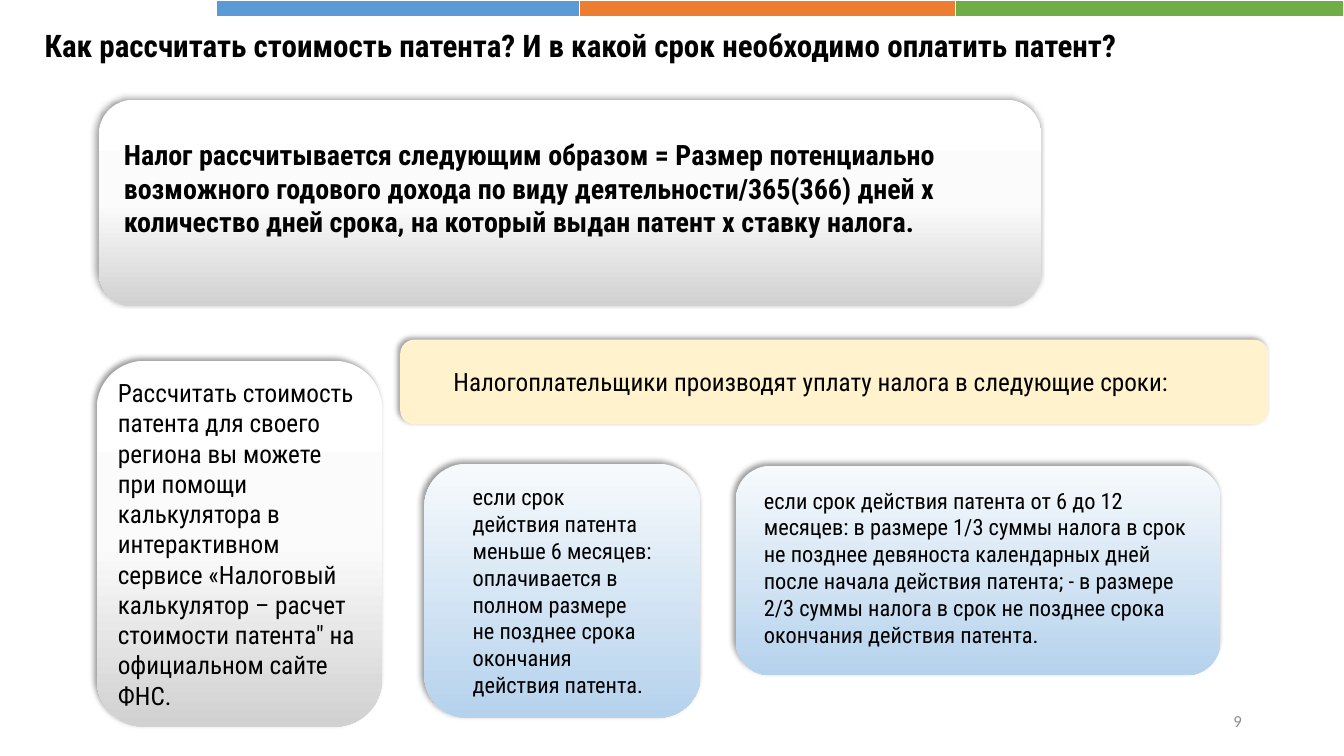
from lxml.etree import SubElement
from pptx import Presentation
from pptx.dml.color import RGBColor
from pptx.enum.shapes import MSO_SHAPE
from pptx.enum.text import MSO_ANCHOR, PP_ALIGN
from pptx.oxml.ns import qn
from pptx.util import Inches, Pt

GREY = [(0, "FFFFFF"), (50, "FBFBFB"), (100, "D1D1D1")]
BLUE = [(0, "F7FAFD"), (100, "B5D2EC")]
CREAM = "FFF2CC"


def color(code):
    return RGBColor.from_string(code)


class Page:
    """Draws styled elements on one slide over a grid of 100 columns and 100 rows."""

    font = "Roboto Condensed"
    ink = "000000"

    def __init__(self, deck):
        self.slide = deck.slides.add_slide(deck.slide_layouts[6])
        self.col = deck.slide_width / 100
        self.row = deck.slide_height / 100

    def place(self, box):
        x, y, w, h = box
        return [round(v) for v in (x * self.col, y * self.row, w * self.col, h * self.row)]

    def bar(self, box, fill):
        shape = self.slide.shapes.add_shape(MSO_SHAPE.RECTANGLE, *self.place(box))
        shape.shadow.inherit = False
        shape.fill.solid()
        shape.fill.fore_color.rgb = color(fill)
        shape.line.color.rgb = color("FFFFFF")
        shape.line.width = Pt(1)

    def card(self, box, fill):
        shape = self.slide.shapes.add_shape(MSO_SHAPE.ROUNDED_RECTANGLE, *self.place(box))
        shape.shadow.inherit = False
        shape.line.fill.background()
        if isinstance(fill, str):
            shape.fill.solid()
            shape.fill.fore_color.rgb = color(fill)
        else:
            self.blend(shape, fill)
        self.shade(shape)

    def blend(self, shape, stops):
        shape.fill.gradient()
        shape.fill.gradient_angle = 270
        ramp = shape.element.spPr.find(".//" + qn("a:gsLst"))
        for old in list(ramp):
            ramp.remove(old)
        for pos, code in stops:
            stop = SubElement(ramp, qn("a:gs"), pos=str(pos * 1000))
            SubElement(stop, qn("a:srgbClr"), val=code)

    def shade(self, shape):
        effects = shape.element.spPr.find(qn("a:effectLst"))
        outer = SubElement(effects, qn("a:outerShdw"), blurRad=str(Pt(4)), dist=str(Pt(3)),
                           dir=str(225 * 60000), algn="br", rotWithShape="0")
        tint = SubElement(outer, qn("a:srgbClr"), val="000000")
        SubElement(tint, qn("a:alpha"), val="40000")

    def text(self, box, words, size=18, bold=False, font=None, ink=None,
             align=PP_ALIGN.LEFT, anchor=MSO_ANCHOR.MIDDLE, inset=True):
        frame = self.slide.shapes.add_textbox(*self.place(box)).text_frame
        frame.word_wrap = True
        frame.vertical_anchor = anchor
        if not inset:
            frame.margin_left = frame.margin_right = 0
            frame.margin_top = frame.margin_bottom = 0
        para = frame.paragraphs[0]
        para.alignment = align
        run = para.add_run()
        run.text = words
        run.font.size = Pt(size)
        run.font.bold = bold
        run.font.name = font or self.font
        run.font.color.rgb = color(ink or self.ink)


def main():
    deck = Presentation()
    deck.slide_width, deck.slide_height = Inches(13.33), Inches(7.5)
    page = Page(deck)

    edges = [16.13, 43.13, 71.1, 100]
    for left, right, fill in zip(edges, edges[1:], ["5B9BD5", "ED7D31", "70AD47"]):
        page.bar((left, 0, right - left, 2.27), fill)

    page.card((7.2, 47.73, 21.23, 48.4), GREY)
    page.text((8.03, 49.07, 19.58, 45.73),
              "Рассчитать стоимость патента для своего региона вы можете при помощи "
              "калькулятора в интерактивном сервисе «Налоговый калькулятор – расчет "
              "стоимости патента\" на официальном сайте ФНС.")

    page.card((7.35, 13.2, 70.13, 27.33), GREY)
    page.text((8.48, 17.47, 67.73, 14.8),
              "Налог рассчитывается следующим образом = Размер потенциально возможного "
              "годового дохода по виду деятельности/365(366) дней х количество дней срока, "
              "на который выдан патент х ставку налога.", size=20, bold=True)

    page.card((31.58, 61.33, 20.55, 33.6), BLUE)
    page.text((34.43, 63.07, 14.85, 30.13),
              "если срок действия патента меньше 6 месяцев: оплачивается в полном размере "
              "не позднее срока окончания действия патента.", size=16)

    page.card((29.78, 44.93, 64.58, 11.2), CREAM)
    page.text((33, 47.73, 57.45, 5.33),
              "Налогоплательщики производят уплату налога в следующие сроки:")

    page.text((2.78, 2.8, 82.28, 6.4),
              " Как рассчитать стоимость патента? И в какой срок необходимо оплатить патент?",
              size=22.2, bold=True, inset=False)

    page.card((54.75, 61.6, 36.08, 27.73), BLUE)
    page.text((56.1, 63.73, 33.3, 22.93),
              "если срок действия патента от 6 до 12 месяцев: в размере 1/3 суммы налога "
              "в срок не позднее девяноста календарных дней после начала действия патента; "
              "- в размере 2/3 суммы налога в срок не позднее срока окончания действия патента.",
              size=16, anchor=MSO_ANCHOR.TOP)

    page.text((70.65, 92.67, 22.5, 5.33), "9", size=12, font="Calibri", ink="8C8C8C",
              align=PP_ALIGN.RIGHT)
    deck.save("out.pptx")


if __name__ == "__main__":
    main()
